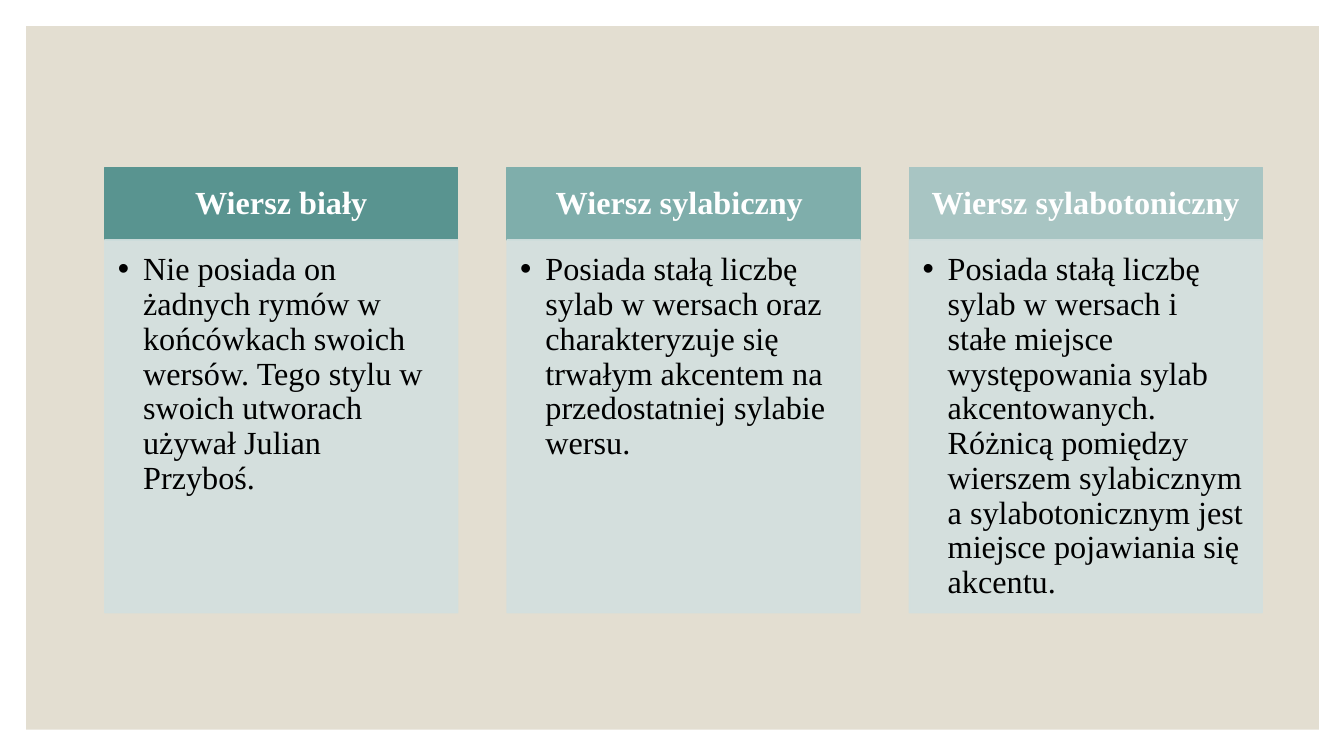
from lxml.etree import SubElement
from pptx import Presentation
from pptx.dml.color import RGBColor
from pptx.enum.shapes import MSO_SHAPE as Shape
from pptx.enum.text import MSO_ANCHOR as Anchor, PP_ALIGN as Align
from pptx.oxml.ns import qn
from pptx.util import Emu, Pt

PX = 9144
FONT = "Times New Roman"
WHITE = RGBColor(0xFF, 0xFF, 0xFF)
BLACK = RGBColor(0, 0, 0)
SAND = RGBColor(0xE3, 0xDE, 0xD1)
MIST = RGBColor(0xD3, 0xE0, 0xDF)
DEEP_TEAL = RGBColor(0x59, 0x94, 0x90)
TEAL = RGBColor(0x7F, 0xAE, 0xAB)
PALE_TEAL = RGBColor(0xA8, 0xC5, 0xC3)

VERSES = [
    ("Wiersz biały", DEEP_TEAL,
     "Nie posiada on żadnych rymów w końcówkach swoich wersów. "
     "Tego stylu w swoich utworach używał Julian Przyboś."),
    ("Wiersz sylabiczny ", TEAL,
     "Posiada stałą liczbę sylab w wersach oraz charakteryzuje się "
     "trwałym akcentem na przedostatniej sylabie wersu."),
    ("Wiersz sylabotoniczny", PALE_TEAL,
     "Posiada stałą liczbę sylab w wersach i stałe miejsce występowania "
     "sylab akcentowanych. Różnicą pomiędzy wierszem sylabicznym "
     "a sylabotonicznym jest miejsce pojawiania się akcentu."),
]


def px(length):
    return Emu(length * PX)


def add_panel(slide, box, color):
    panel = slide.shapes.add_shape(Shape.RECTANGLE, *map(px, box))
    panel.shadow.inherit = False
    panel.fill.solid()
    panel.fill.fore_color.rgb = color
    panel.line.color.rgb = color
    panel.line.width = Pt(1)
    return panel


def write(panel, text, color, align, anchor, insets, bold=False):
    frame = panel.text_frame
    frame.word_wrap = True
    frame.vertical_anchor = anchor
    (frame.margin_left, frame.margin_top,
     frame.margin_right, frame.margin_bottom) = map(px, insets)
    frame.text = text
    paragraph = frame.paragraphs[0]
    paragraph.alignment = align
    paragraph.line_spacing = 0.9
    font = paragraph.runs[0].font
    font.name, font.size, font.bold = FONT, Pt(23), bold
    font.color.rgb = color
    return paragraph


def add_bullet(paragraph, indent):
    properties = paragraph._p.get_or_add_pPr()
    properties.set("marL", str(px(indent)))
    properties.set("indent", str(-px(indent)))
    SubElement(properties, qn("a:buFont"), typeface="Arial")
    SubElement(properties, qn("a:buChar"), char="•")


def make_translucent(panel, percent):
    for color in panel._element.spPr.iter(qn("a:srgbClr")):
        SubElement(color, qn("a:alpha"), val=str(percent * 1000))


def add_backdrop(slide, box):
    backdrop = add_panel(slide, box, SAND)
    backdrop.line.fill.background()


def add_verse_column(slide, box, name, color, description):
    left, top, width, height = box
    header_height = 72
    header = add_panel(slide, (left, top, width, header_height), color)
    write(header, name, WHITE, Align.CENTER, Anchor.MIDDLE,
          (18, 10, 18, 10), bold=True)
    body = add_panel(
        slide, (left, top + header_height, width, height - header_height), MIST)
    make_translucent(body, 90)
    paragraph = write(body, description, BLACK, Align.LEFT, Anchor.TOP,
                      (13, 13, 18, 20))
    add_bullet(paragraph, 25)


def add_verse_columns(slide, box):
    left, top, width, height = box
    column_width = 350
    step = (width - column_width) // (len(VERSES) - 1)
    for index, verse in enumerate(VERSES):
        column = (left + index * step, top, column_width, height)
        add_verse_column(slide, column, *verse)


def main():
    deck = Presentation()
    deck.slide_width, deck.slide_height = px(1333), px(750)
    slide = deck.slides.add_slide(deck.slide_layouts[6])
    add_backdrop(slide, (26, 26, 1282, 698))
    add_verse_columns(slide, (104, 166, 1149, 442))
    deck.save("out.pptx")


if __name__ == "__main__":
    main()
